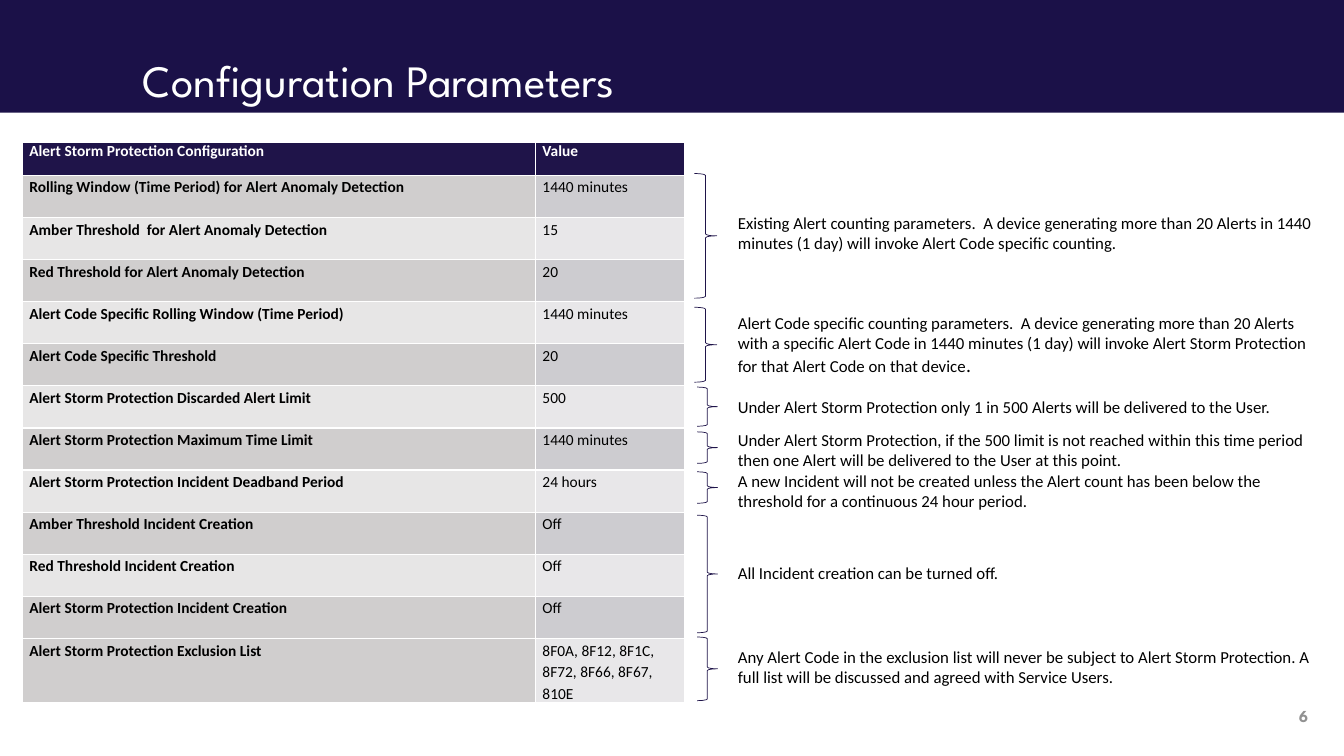
from pptx import Presentation
from pptx.dml.color import RGBColor
from pptx.enum.shapes import MSO_SHAPE as SHAPE
from pptx.enum.text import MSO_ANCHOR as ANCHOR, MSO_AUTO_SIZE as AUTO, PP_ALIGN as ALIGN
from pptx.util import Pt

NAVY = RGBColor(0x1B, 0x11, 0x48)
INDIGO = RGBColor(0x1F, 0x14, 0x49)
WHITE = RGBColor(0xFF, 0xFF, 0xFF)
BLACK = RGBColor(0x00, 0x00, 0x00)
GREY = RGBColor(0x91, 0x91, 0x91)
NAME_FILLS = (RGBColor(0xD0, 0xCE, 0xCE), RGBColor(0xE7, 0xE6, 0xE6))
VALUE_FILLS = (RGBColor(0xCD, 0xCC, 0xD0), RGBColor(0xE8, 0xE7, 0xE9))

HEAD_FONT = "League Spartan"
BODY_FONT = "Calibri"

HEADER = ("Alert Storm Protection Configuration", "Value")
PARAMETERS = [
    ("Rolling Window (Time Period) for Alert Anomaly Detection", "1440 minutes"),
    ("Amber Threshold  for Alert Anomaly Detection", "15"),
    ("Red Threshold for Alert Anomaly Detection", "20"),
    ("Alert Code Specific Rolling Window (Time Period)", "1440 minutes"),
    ("Alert Code Specific Threshold", "20"),
    ("Alert Storm Protection Discarded Alert Limit", "500"),
    ("Alert Storm Protection Maximum Time Limit", "1440 minutes"),
    ("Alert Storm Protection Incident Deadband Period", "24 hours"),
    ("Amber Threshold Incident Creation", "Off"),
    ("Red Threshold Incident Creation", "Off"),
    ("Alert Storm Protection Incident Creation", "Off"),
    ("Alert Storm Protection Exclusion List", "8F0A, 8F12, 8F1C, 8F72, 8F66, 8F67, 810E"),
]

WIDE_BRACE = (496, 16)
NARROW_BRACE = (498, 14.5)
NOTES = [
    (WIDE_BRACE, 124, 89, 148.3, 51,
     ["Existing Alert counting parameters.  A device generating more than 20 Alerts in 1440 "
      "minutes (1 day) will invoke Alert Code specific counting."]),
    (WIDE_BRACE, 219.5, 53.5, 219.5, 51,
     ["Alert Code specific counting parameters.  A device generating more than 20 Alerts with "
      "a specific Alert Code in 1440 minutes (1 day) will invoke Alert Storm Protection for "
      "that Alert Code on that device", "."]),
    (NARROW_BRACE, 276.5, 28, 280, 24,
     ["Under Alert Storm Protection only 1 in 500 Alerts will be delivered to the User."]),
    (NARROW_BRACE, 308.5, 22.5, 303.2, 32,
     ["Under Alert Storm Protection, if the 500 limit is not reached within this time period "
      "then one Alert will be delivered to the User at this point."]),
    (NARROW_BRACE, 337, 22.5, 332.6, 32,
     ["A new Incident will not be created unless the Alert count has been below the threshold "
      "for a continuous 24 hour period."]),
    (NARROW_BRACE, 368, 84, 398.2, 24,
     ["All Incident creation can be turned off."]),
    (NARROW_BRACE, 455, 45.5, 458.6, 24,
     ["Any Alert Code in the exclusion list will never be subject to Alert Storm Protection. "
      "A full list will be discussed and agreed with Service Users."]),
]


def style_font(font, name, size, color, bold=False):
    font.name = name
    font.size = Pt(size)
    font.bold = bold
    font.color.rgb = color


def clear_margins(tf):
    tf.margin_left = tf.margin_right = tf.margin_top = tf.margin_bottom = 0


def add_title_band(s, text):
    band = s.shapes.add_shape(SHAPE.RECTANGLE, 0, 0, Pt(960), Pt(80.5))
    band.shadow.inherit = False
    band.fill.solid()
    band.fill.fore_color.rgb = NAVY
    band.line.fill.background()
    s.shapes._spTree.insert(2, band._element)

    title = s.shapes.title
    title.left, title.top, title.width, title.height = Pt(102), Pt(37.5), Pt(672.5), Pt(39)
    tf = title.text_frame
    tf.text = text
    clear_margins(tf)
    tf.auto_size = AUTO.NONE
    tf.vertical_anchor = ANCHOR.TOP
    p = tf.paragraphs[0]
    p.alignment = ALIGN.LEFT
    style_font(p.runs[0].font, HEAD_FONT, 32, WHITE)


def fill_cell(cell, text, fill, color, bold, spacing):
    cell.fill.solid()
    cell.fill.fore_color.rgb = fill
    cell.margin_left = cell.margin_right = Pt(5)
    cell.margin_top = cell.margin_bottom = 0
    cell.text_frame.text = text
    p = cell.text_frame.paragraphs[0]
    p.line_spacing = spacing
    style_font(p.runs[0].font, BODY_FONT, 11, color, bold)


def add_parameter_table(s):
    last = len(PARAMETERS)
    table = s.shapes.add_table(last + 1, 2, Pt(16), Pt(101.5), Pt(473), Pt(401)).table
    table.columns[0].width, table.columns[1].width = Pt(366.5), Pt(106.5)
    table.rows[0].height = Pt(23.7)
    for col, text in enumerate(HEADER):
        fill_cell(table.cell(0, col), text, INDIGO, WHITE, True, 1.0)
    for row, (name, value) in enumerate(PARAMETERS, 1):
        table.rows[row].height = Pt(46 if row == last else 30.1)
        band = (row - 1) % 2
        name_fill = NAME_FILLS[0 if row == last else band]
        fill_cell(table.cell(row, 0), name, name_fill, BLACK, True, 1.15)
        fill_cell(table.cell(row, 1), value, VALUE_FILLS[band], BLACK, False, 1.15)


def add_brace(s, left, top, width, height):
    sp = s.shapes.add_shape(SHAPE.RIGHT_BRACE, Pt(left), Pt(top), Pt(width), Pt(height))
    sp.shadow.inherit = False
    sp.fill.background()
    sp.line.color.rgb = INDIGO
    sp.line.width = Pt(0.5)


def add_note(s, top, height, parts):
    tf = s.shapes.add_textbox(Pt(520), Pt(top), Pt(427), Pt(height)).text_frame
    tf.word_wrap = True
    for text, size in zip(parts, (12, 14)):
        r = tf.paragraphs[0].add_run()
        r.text = text
        style_font(r.font, BODY_FONT, size, BLACK)


def add_page_number(s, text):
    tf = s.shapes.add_textbox(Pt(874), Pt(503.5), Pt(60.5), Pt(15)).text_frame
    tf.text = text
    clear_margins(tf)
    tf.word_wrap = True
    tf.vertical_anchor = ANCHOR.MIDDLE
    p = tf.paragraphs[0]
    p.alignment = ALIGN.RIGHT
    style_font(p.runs[0].font, HEAD_FONT, 12, GREY, True)


def main():
    prs = Presentation()
    prs.slide_width, prs.slide_height = Pt(960), Pt(540)
    s = prs.slides.add_slide(prs.slide_layouts[5])
    add_title_band(s, "Configuration Parameters")
    add_page_number(s, "6")
    add_parameter_table(s)
    for (left, width), brace_top, brace_height, top, height, parts in NOTES:
        add_brace(s, left, brace_top, width, brace_height)
        add_note(s, top, height, parts)
    prs.save("out.pptx")


if __name__ == "__main__":
    main()
